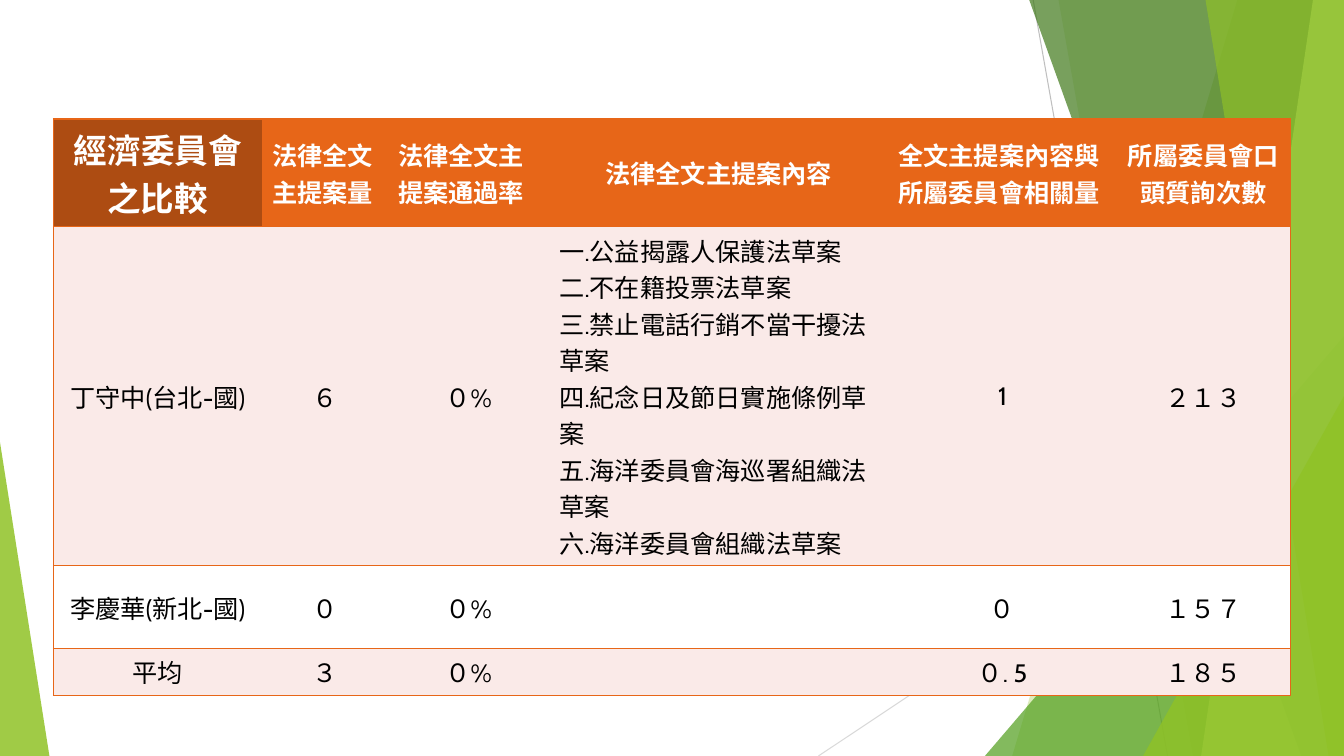
from dataclasses import dataclass

from pptx import Presentation
from pptx.dml.color import RGBColor
from pptx.enum.shapes import MSO_CONNECTOR, MSO_SHAPE
from pptx.enum.text import MSO_ANCHOR, PP_ALIGN
from pptx.oxml.ns import qn
from pptx.util import Pt
from lxml.etree import SubElement


@dataclass(frozen=True)
class Theme:
    font: str = "Cabin"
    heading_size: int = 24
    text_size: int = 18
    white: str = "FFFFFF"
    black: str = "000000"
    orange: str = "E76618"
    rust: str = "AD4C12"
    blush: str = "FAEAE8"
    lime: str = "90C226"
    green: str = "54A021"
    forest: str = "3F7819"
    pale_lime: str = "C0E474"
    grey: str = "BFBFBF"
    pale_grey: str = "D9D9D9"


THEME = Theme()
WIDTH, HEIGHT = 960, 540

HEADINGS = [
    "經濟委員會\n之比較",
    "法律全文\n主提案量",
    "法律全文主\n提案通過率",
    "法律全文主提案內容",
    "全文主提案內容與所屬委員會相關量",
    "所屬委員會口頭質詢次數",
]
BILLS = "\n".join([
    "一.公益揭露人保護法草案",
    "二.不在籍投票法草案",
    "三.禁止電話行銷不當干擾法草案",
    "四.紀念日及節日實施條例草案",
    "五.海洋委員會海巡署組織法草案",
    "六.海洋委員會組織法草案",
])
LEGISLATORS = [
    ["丁守中(台北-國)", "６", "０%", BILLS, "1", "２１３"],
    ["李慶華(新北-國)", "０", "０%", "", "０", "１５７"],
    ["平均", "３", "０%", "", "０. 5", "１８５"],
]
COLUMN_WIDTHS = [149, 90, 115.2, 242, 163.4, 123.8]
ROW_HEIGHTS = [77, 242, 59, 33]
LEFT_ALIGNED = {(0, 1), (0, 2), (0, 4), (1, 3)}


def write(frame, text, *, size, color, bold=False, align=PP_ALIGN.CENTER):
    frame.text = text
    for paragraph in frame.paragraphs:
        paragraph.alignment = align
        font = paragraph.font
        for run in paragraph.runs:
            font = run.font
            font.name = THEME.font
            font.bold = bold
            font.color.rgb = RGBColor.from_string(color)
        font.size = Pt(size)


class SlideBuilder:
    """Draws the elements of one slide in a shared style."""

    def __init__(self, slide, theme):
        self.shapes = slide.shapes
        self.theme = theme

    def line(self, start, end, color):
        connector = self.shapes.add_connector(
            MSO_CONNECTOR.STRAIGHT, *map(Pt, (*start, *end)))
        connector.line.color.rgb = RGBColor.from_string(color)
        connector.line.width = Pt(0.75)
        SubElement(connector._element.spPr, qn("a:effectLst"))

    def tint(self, shape, color, opacity):
        shape.shadow.inherit = False
        shape.line.fill.background()
        shape.fill.solid()
        shape.fill.fore_color.rgb = RGBColor.from_string(color)
        tone = shape._element.spPr.find(qn("a:solidFill"))[0]
        SubElement(tone, qn("a:alpha"), val=str(opacity * 1000))

    def band(self, top_left, bottom_left, color, opacity):
        builder = self.shapes.build_freeform(Pt(top_left), Pt(-0.6))
        corners = [(WIDTH, -0.6), (WIDTH, HEIGHT), (bottom_left, HEIGHT)]
        builder.add_line_segments([(Pt(x), Pt(y)) for x, y in corners])
        self.tint(builder.convert_to_shape(), color, opacity)

    def triangle(self, left, top, width, apex, color, opacity):
        wedge = self.shapes.add_shape(
            MSO_SHAPE.ISOSCELES_TRIANGLE,
            *map(Pt, (left, top, width, HEIGHT - top)))
        wedge.adjustments[0] = apex
        self.tint(wedge, color, opacity)

    def borders(self, cell, visible_sides):
        properties = cell._tc.get_or_add_tcPr()
        for index, side in enumerate("LRTB"):
            edge = SubElement(properties, qn(f"a:ln{side}"), w=str(Pt(1)))
            if side in visible_sides:
                paint = SubElement(edge, qn("a:solidFill"))
                SubElement(paint, qn("a:srgbClr"), val=self.theme.orange)
            else:
                SubElement(edge, qn("a:noFill"))
            properties.insert(index, edge)

    def cell_fill(self, row, column):
        if row == 0:
            return self.theme.rust if column == 0 else self.theme.orange
        return self.theme.blush if row % 2 else self.theme.white

    def table(self, left, top, rows):
        comparison = self.shapes.add_table(
            len(rows), len(COLUMN_WIDTHS), Pt(left), Pt(top),
            Pt(sum(COLUMN_WIDTHS)), Pt(sum(ROW_HEIGHTS))).table
        comparison.first_row = comparison.horz_banding = False
        for column, width in zip(comparison.columns, COLUMN_WIDTHS):
            column.width = Pt(width)
        for row, height in zip(comparison.rows, ROW_HEIGHTS):
            row.height = Pt(height)
        last = len(COLUMN_WIDTHS) - 1
        for r, texts in enumerate(rows):
            for c, text in enumerate(texts):
                cell = comparison.cell(r, c)
                cell.vertical_anchor = MSO_ANCHOR.MIDDLE
                cell.fill.solid()
                cell.fill.fore_color.rgb = RGBColor.from_string(
                    self.cell_fill(r, c))
                self.borders(cell, "TB" + {0: "L", last: "R"}.get(c, ""))
                write(
                    cell.text_frame, text,
                    size=(self.theme.heading_size if r == c == 0
                          else self.theme.text_size),
                    color=self.theme.black if r else self.theme.white,
                    bold=r == 0,
                    align=(PP_ALIGN.LEFT if (r, c) in LEFT_ALIGNED
                           else PP_ALIGN.CENTER))


def main():
    deck = Presentation()
    deck.slide_width, deck.slide_height = Pt(WIDTH), Pt(HEIGHT)
    builder = SlideBuilder(deck.slides.add_slide(deck.slide_layouts[6]), THEME)
    builder.line((738, 0), (834, HEIGHT), THEME.grey)
    builder.line((WIDTH, 290), (584.6, HEIGHT), THEME.pale_grey)
    builder.band(884, 723, THEME.lime, 30)
    builder.band(756, 852, THEME.lime, 20)
    builder.triangle(703.5, 240, 256.5, 1, THEME.green, 72)
    builder.band(735, 929.5, THEME.forest, 70)
    builder.band(938, 858, THEME.pale_lime, 70)
    builder.band(861, 949, THEME.lime, 65)
    builder.triangle(816.5, 283, 143.5, 1, THEME.lime, 80)
    builder.triangle(0, 316, 35.3, 0, THEME.lime, 85)
    builder.table(38.2, 85, [HEADINGS, *LEGISLATORS])
    deck.save("out.pptx")


if __name__ == "__main__":
    main()
